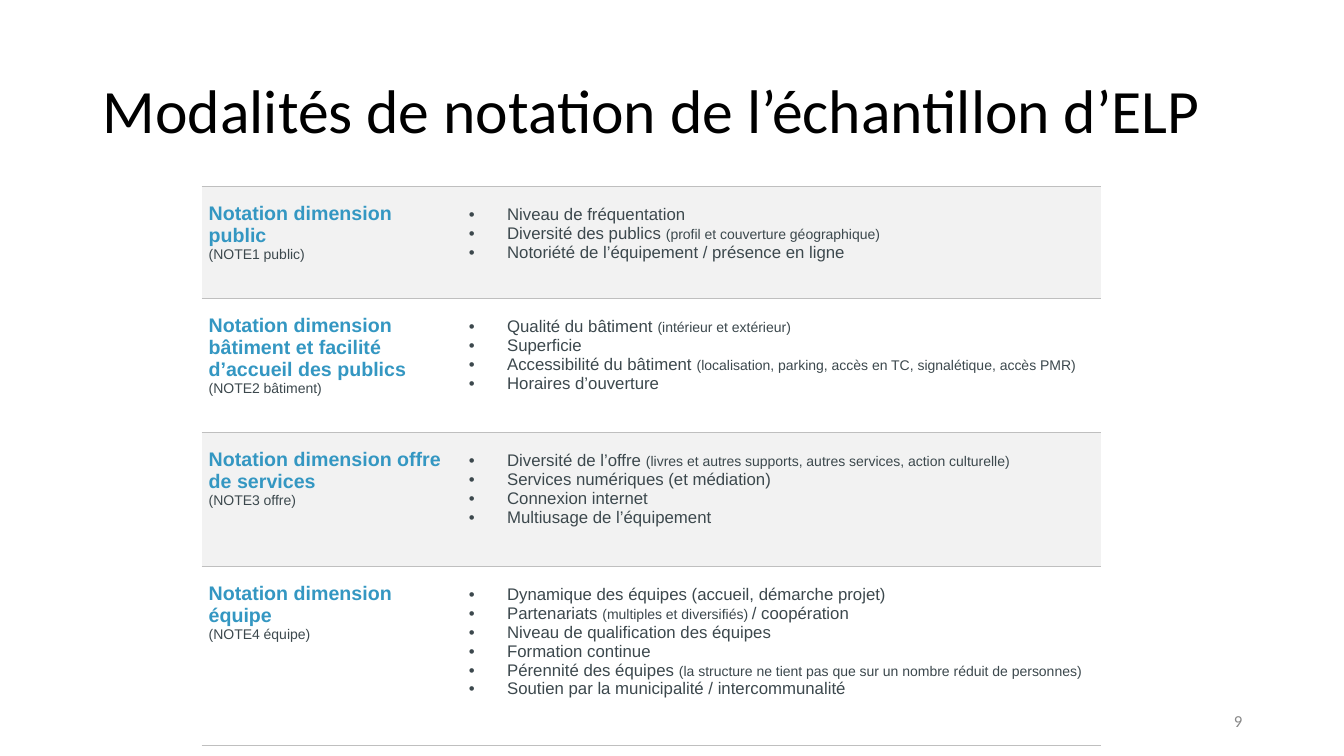
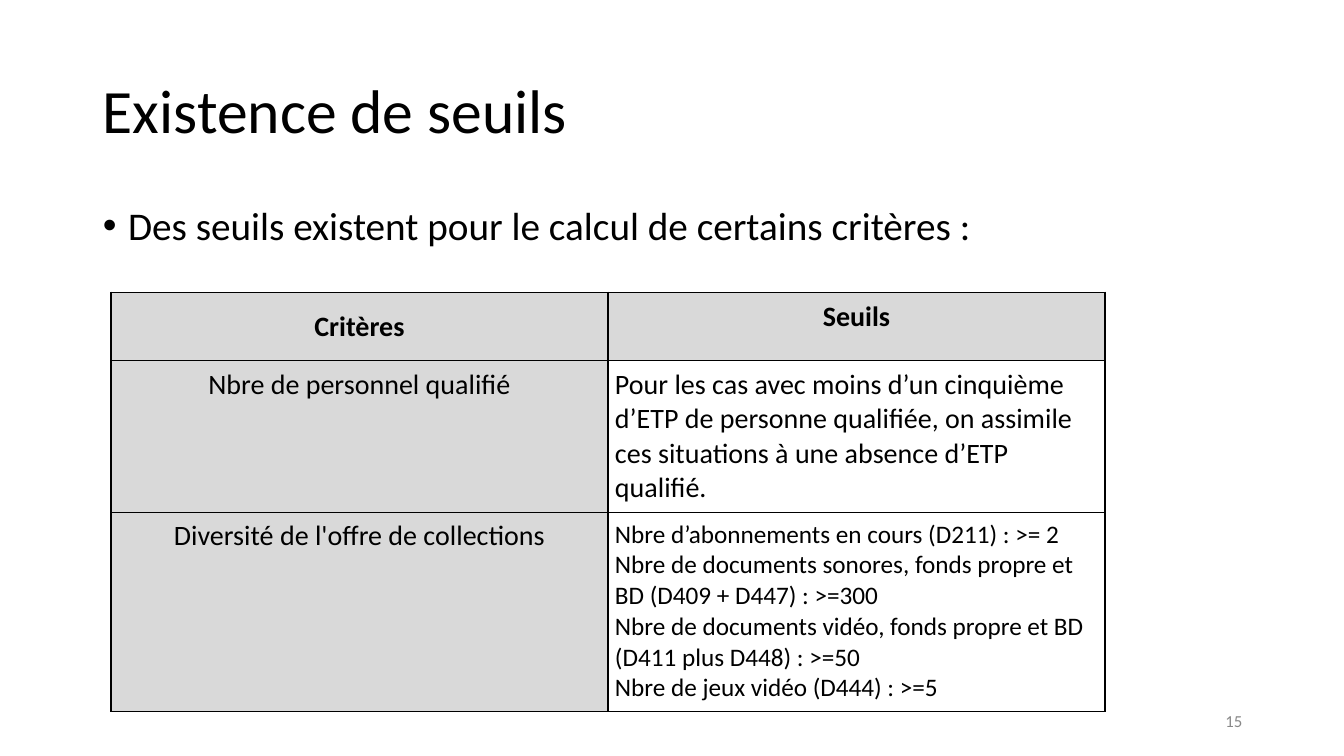
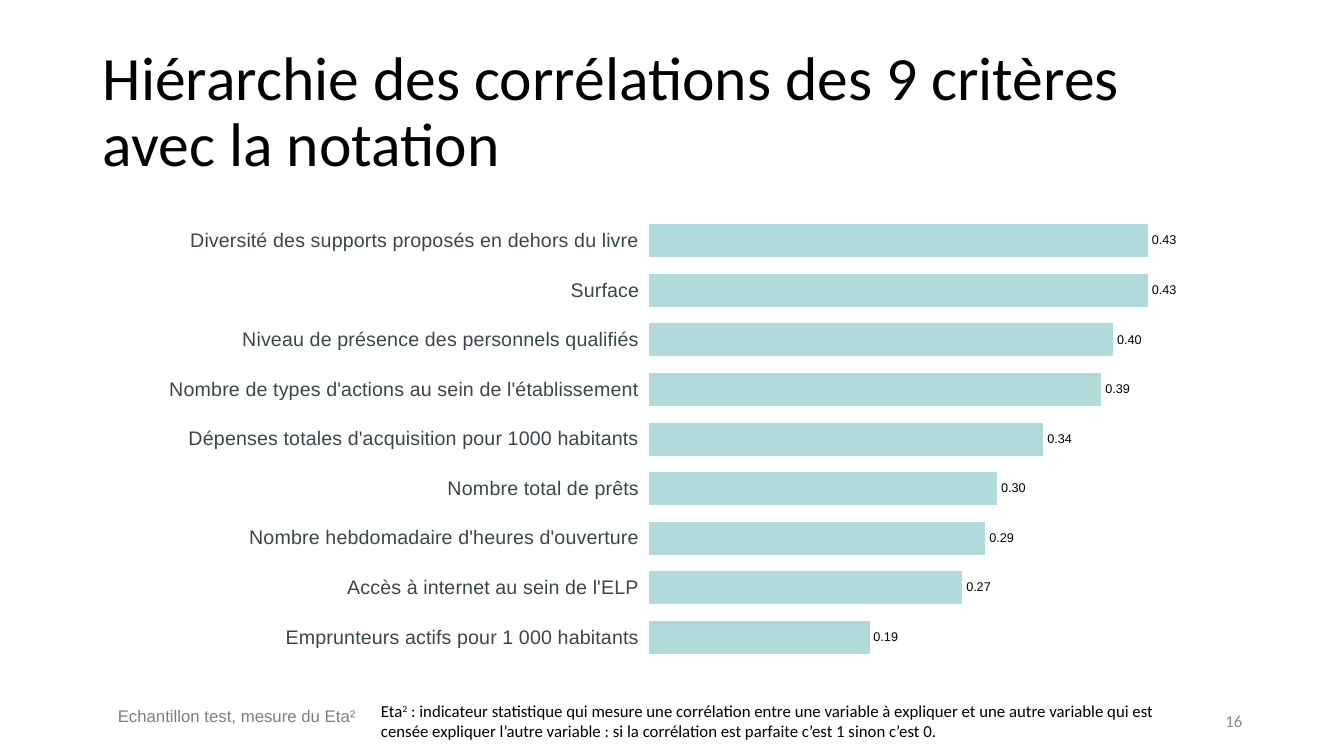
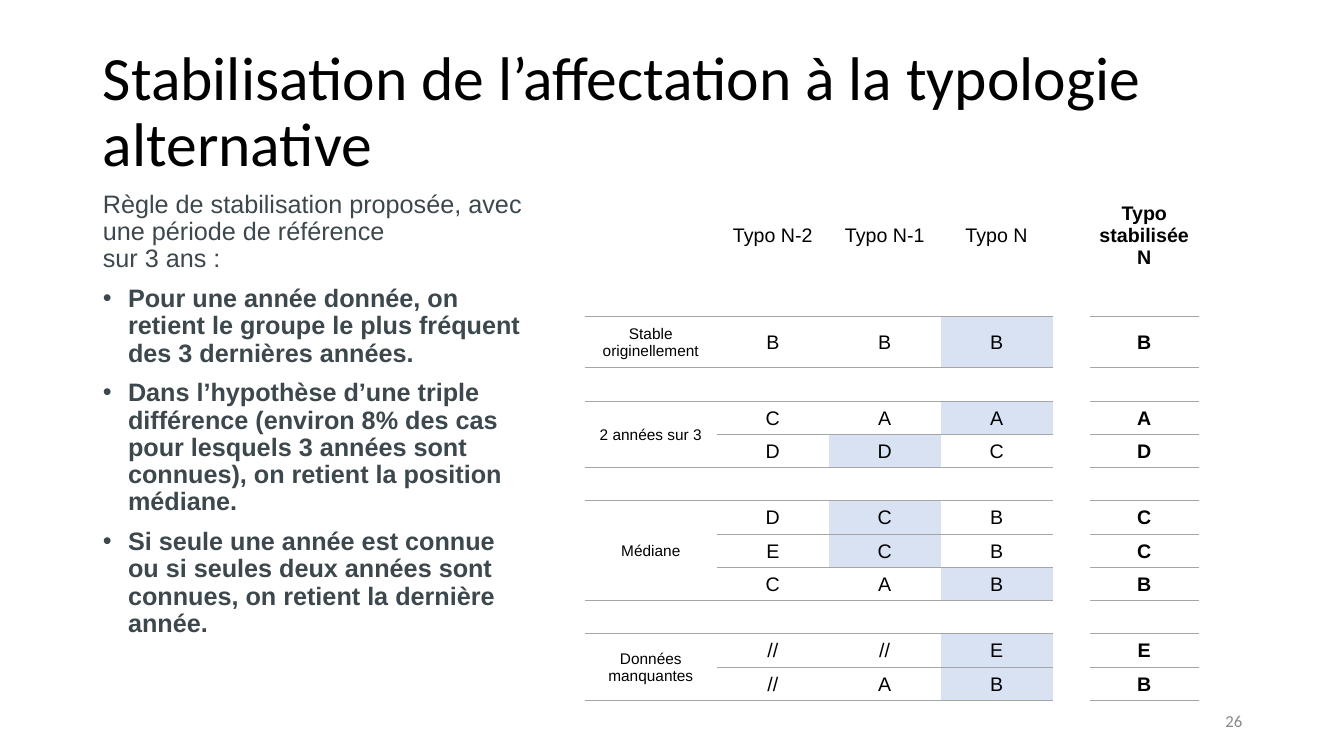
"""Build four slides on the rating and typing of public reading places."""
from dataclasses import dataclass
from typing import Any, Optional, Sequence, Union

import lxml.etree
import pptx
import pptx.chart.data
import pptx.dml.color
import pptx.enum.chart
import pptx.enum.text
import pptx.oxml.ns
import pptx.util

RGBColor = pptx.dml.color.RGBColor
BLACK = RGBColor(0x00, 0x00, 0x00)
SLATE = RGBColor(0x3C, 0x48, 0x4D)
LABEL = RGBColor(0x3A, 0x47, 0x4B)
BLUE = RGBColor(0x34, 0x97, 0xC2)
TEAL = RGBColor(0xB0, 0xDB, 0xDA)
PALE = RGBColor(0xD8, 0xE2, 0xF3)
MIST = RGBColor(0xF2, 0xF2, 0xF2)
HEAD = RGBColor(0xD9, 0xD9, 0xD9)
RULE = RGBColor(0xBF, 0xBF, 0xBF)
GRID = RGBColor(0xA6, 0xA6, 0xA6)
NOTE = RGBColor(0x7F, 0x7F, 0x7F)
PAGE = RGBColor(0x88, 0x88, 0x88)
SANS = "Arial"
MAIN = "Calibri"
PLAIN = "{2D5ABB26-0587-4C30-8999-92F81FD0307C}"
ALIGN = pptx.enum.text.PP_ALIGN
ANCHOR = pptx.enum.text.MSO_ANCHOR
qn = pptx.oxml.ns.qn


@dataclass(frozen=True)
class Span:
    text: str
    size: Optional[int] = None
    bold: Optional[bool] = None
    color: Optional[RGBColor] = None
    sup: bool = False


Line = Union[str, Sequence[Span]]


@dataclass(frozen=True)
class Box:
    left: int
    top: int
    width: int
    height: int

    def emu(self) -> tuple[int, ...]:
        return px(self.left), px(self.top), px(self.width), px(self.height)


@dataclass(frozen=True)
class Theme:
    name: str
    note: str
    items: Sequence[Line]
    height: int


@dataclass(frozen=True)
class Case:
    years: Sequence[str]
    pick: int
    final: str


@dataclass(frozen=True)
class Group:
    name: str
    cases: Sequence[Case]


def px(count: int) -> int:
    return pptx.util.Emu(count * 9144)


def small(lead: str, aside: str, tail: str = "") -> list[Span]:
    parts = [Span(lead), Span(aside, size=10)]
    return parts + [Span(tail)] if tail else parts


def text(frame: Any, lines: Sequence[Line], *, size: int, face: str = MAIN, color: RGBColor = BLACK,
         bold: bool = False, align: Any = ALIGN.LEFT, mark: int = 0, plain: int = 0,
         gap: int = 0, lead: float = 1.0) -> None:
    for row, line in enumerate(lines):
        para = frame.paragraphs[0] if row == 0 else frame.add_paragraph()
        props = para._p.get_or_add_pPr()
        dent = mark if row >= plain else 0
        props.set("marL", str(px(dent)))
        props.set("indent", str(px(-dent)))
        if dent:
            lxml.etree.SubElement(props, qn("a:buFont"), typeface=SANS)
            lxml.etree.SubElement(props, qn("a:buChar"), char="•")
        else:
            lxml.etree.SubElement(props, qn("a:buNone"))
        para.alignment = align
        para.line_spacing = lead
        para.space_before = pptx.util.Pt(gap if row else 0)
        for span in [Span(line)] if isinstance(line, str) else line:
            for part, piece in enumerate(span.text.split("\n")):
                if part:
                    para.add_line_break()
                run = para.add_run()
                run.text = piece
                run.font.name = face
                run.font.size = pptx.util.Pt(span.size or size)
                run.font.bold = bold if span.bold is None else span.bold
                run.font.color.rgb = span.color or color
                if span.sup:
                    run._r.get_or_add_rPr().set("baseline", "30000")


def place(shape: Any, box: Box) -> None:
    shape.left, shape.top, shape.width, shape.height = box.emu()


def setup(frame: Any, anchor: Any = ANCHOR.TOP) -> Any:
    frame.word_wrap = True
    frame.auto_size = pptx.enum.text.MSO_AUTO_SIZE.NONE
    frame.vertical_anchor = anchor
    frame.margin_left = frame.margin_right = px(10)
    frame.margin_top = frame.margin_bottom = px(5)
    return frame


def label(slide: Any, box: Box, lines: Sequence[Line], anchor: Any = ANCHOR.TOP, **form: Any) -> None:
    shape = slide.shapes.add_textbox(*box.emu())
    text(setup(shape.text_frame, anchor), lines, **form)


def start(deck: Any, title: str, page: int, body: Optional[Box] = None) -> Any:
    slide = deck.slides.add_slide(deck.slide_layouts[1 if body else 5])
    place(slide.shapes.title, Box(92, 40, 1150, 145))
    text(setup(slide.shapes.title.text_frame, ANCHOR.MIDDLE), [title], size=44, lead=0.9)
    if body:
        place(slide.placeholders[1], body)
        setup(slide.placeholders[1].text_frame)
    label(slide, Box(942, 695, 300, 40), [str(page)], ANCHOR.MIDDLE, size=12, color=PAGE, align=ALIGN.RIGHT)
    return slide


def table(slide: Any, left: int, top: int, cols: Sequence[int], rows: Sequence[int]) -> Any:
    box = Box(left, top, sum(cols), sum(rows))
    grid = slide.shapes.add_table(len(rows), len(cols), *box.emu()).table
    grid.first_row = grid.horz_banding = False
    grid._tbl.tblPr.find(qn("a:tableStyleId")).text = PLAIN
    for col, width in zip(grid.columns, cols):
        col.width = px(width)
    for row, height in zip(grid.rows, rows):
        row.height = px(height)
    return grid


def cell(item: Any, lines: Sequence[Line] = (), *, pad: Sequence[int], edges: str = "", ink: RGBColor = BLACK,
         weight: float = 1, fill: Optional[RGBColor] = None, anchor: Any = ANCHOR.TOP, **form: Any) -> None:
    item.margin_left, item.margin_top, item.margin_right, item.margin_bottom = map(px, pad)
    item.vertical_anchor = anchor
    props = item._tc.get_or_add_tcPr()
    for edge in edges:
        line = lxml.etree.SubElement(props, qn(f"a:ln{edge}"), w=str(pptx.util.Pt(weight)))
        solid = lxml.etree.SubElement(line, qn("a:solidFill"))
        lxml.etree.SubElement(solid, qn("a:srgbClr"), val=str(ink))
    if fill is None:
        item.fill.background()
    else:
        item.fill.solid()
        item.fill.fore_color.rgb = fill
    if lines:
        text(item.text_frame, lines, **form)


THEMES = [
    Theme("public", "(NOTE1 public)", [
        "Niveau de fréquentation",
        small("Diversité des publics ", "(profil et couverture géographique)"),
        "Notoriété de l’équipement / présence en ligne"], 111),
    Theme("bâtiment et facilité d’accueil des publics", "(NOTE2 bâtiment)", [
        small("Qualité du bâtiment ", "(intérieur et extérieur)"),
        "Superficie",
        small("Accessibilité du bâtiment ", "(localisation, parking, accès en TC, signalétique, accès PMR)"),
        "Horaires d’ouverture"], 133),
    Theme("offre de services", "(NOTE3 offre)", [
        small("Diversité de l’offre ", "(livres et autres supports, autres services, action culturelle)"),
        "Services numériques (et médiation)",
        "Connexion internet",
        "Multiusage de l’équipement"], 133),
    Theme("équipe", "(NOTE4 équipe)", [
        "Dynamique des équipes (accueil, démarche projet)",
        small("Partenariats ", "(multiples et diversifiés) ", "/ coopération"),
        "Niveau de qualification des équipes",
        "Formation continue",
        small("Pérennité des équipes ", "(la structure ne tient pas que sur un nombre réduit de personnes)"),
        "Soutien par la municipalité / intercommunalité"], 178),
]

LIMITS = [
    ("Nbre de personnel qualifié", 20, [
        "Pour les cas avec moins d’un cinquième d’ETP de personne qualifiée, on assimile ces situations "
        "à une absence d’ETP qualifié."]),
    ("Diversité de l'offre de collections", 18, [
        "Nbre d’abonnements en cours (D211) : >= 2",
        "Nbre de documents sonores, fonds propre et BD (D409 + D447) : >=300",
        "Nbre de documents vidéo, fonds propre et BD (D411 plus D448) : >=50",
        "Nbre de jeux vidéo (D444) : >=5"]),
]

SCORES = {
    "Diversité des supports proposés en dehors du livre": 0.43,
    "Surface": 0.43,
    "Niveau de présence des personnels qualifiés": 0.40,
    "Nombre de types d'actions au sein de l'établissement": 0.39,
    "Dépenses totales d'acquisition pour 1000 habitants": 0.34,
    "Nombre total de prêts": 0.30,
    "Nombre hebdomadaire d'heures d'ouverture": 0.29,
    "Accès à internet au sein de l'ELP": 0.27,
    "Emprunteurs actifs pour 1 000 habitants": 0.19,
}

GROUPS = [
    Group("Stable originellement", [Case(("B", "B", "B"), 2, "B")]),
    Group("2 années sur 3", [Case(("C", "A", "A"), 2, "A"), Case(("D", "D", "C"), 1, "D")]),
    Group("Médiane", [Case(("D", "C", "B"), 1, "C"), Case(("E", "C", "B"), 1, "C"),
                      Case(("C", "A", "B"), 2, "B")]),
    Group("Données manquantes", [Case(("//", "//", "E"), 2, "E"), Case(("//", "A", "B"), 2, "B")]),
]


def themes(deck: Any) -> None:
    slide = start(deck, "Modalités de notation de l’échantillon d’ELP", 9)
    grid = table(slide, 200, 185, [258, 634], [theme.height for theme in THEMES])
    for row, theme in enumerate(THEMES):
        look = dict(edges="TB", ink=RULE, fill=None if row % 2 else MIST, face=SANS, color=SLATE)
        name = [Span(f"Notation dimension {theme.name}", size=14, bold=True, color=BLUE)]
        cell(grid.cell(row, 0), [name, theme.note], pad=(7, 16, 7, 0), size=10, **look)
        cell(grid.cell(row, 1), theme.items, pad=(7, 19, 7, 0), size=12, mark=38, align=ALIGN.JUSTIFY, **look)


def limits(deck: Any) -> None:
    slide = start(deck, "Existence de seuils", 15, Box(92, 200, 1150, 476))
    text(slide.placeholders[1].text_frame, ["Des seuils existent pour le calcul de certains critères :"],
         size=28, mark=25, lead=0.9)
    grid = table(slide, 110, 290, [493, 493], [68, 150, 198])
    look = dict(pad=(7, 7, 7, 7), edges="LRTB")
    top = dict(look, fill=HEAD, align=ALIGN.CENTER, size=20)
    cell(grid.cell(0, 0), ["Critères"], anchor=ANCHOR.MIDDLE, bold=True, **top)
    cell(grid.cell(0, 1), ["Seuils"], bold=True, **top)
    for row, (name, size, lines) in enumerate(LIMITS, 1):
        cell(grid.cell(row, 0), [name], **top)
        cell(grid.cell(row, 1), lines, size=size, **look)


def scores(deck: Any) -> None:
    slide = start(deck, "Hiérarchie des corrélations des 9 critères avec la notation", 16)
    data = pptx.chart.data.CategoryChartData(number_format="0.00")
    data.categories = list(SCORES)
    data.add_series("Series 1", list(SCORES.values()))
    kind = pptx.enum.chart.XL_CHART_TYPE.BAR_CLUSTERED
    chart = slide.shapes.add_chart(kind, *Box(92, 200, 1150, 476).emu(), data).chart
    chart.has_legend = chart.has_title = False
    chart.font.name = SANS
    chart.font.size = pptx.util.Pt(18)
    chart.font.color.rgb = BLACK
    names = chart.category_axis
    names.reverse_order = True
    names.format.line.fill.background()
    names.tick_labels.font.name = SANS
    names.tick_labels.font.size = pptx.util.Pt(14)
    names.tick_labels.font.color.rgb = LABEL
    scale = chart.value_axis
    scale.visible = scale.has_major_gridlines = False
    scale.minimum_scale, scale.maximum_scale = 0, 0.5
    plot = chart.plots[0]
    plot.gap_width = 50
    plot.vary_by_categories = False
    fill = plot.series[0].format.fill
    fill.solid()
    fill.fore_color.rgb = TEAL
    plot.has_data_labels = True
    tags = plot.data_labels
    tags.show_value = True
    tags.number_format, tags.number_format_is_linked = "0.00", False
    tags.position = pptx.enum.chart.XL_LABEL_POSITION.OUTSIDE_END
    tags.font.name = SANS
    tags.font.size = pptx.util.Pt(9)
    tags.font.color.rgb = BLACK
    area = chart._chartSpace.chart.plotArea
    for old in area.findall(qn("c:layout")):
        area.remove(old)
    frame = lxml.etree.Element(qn("c:layout"))
    area.insert(0, frame)
    manual = lxml.etree.SubElement(frame, qn("c:manualLayout"))
    for tag, val in dict(layoutTarget="inner", xMode="edge", yMode="edge", x=0.48, y=0.03, w=0.5, h=0.93).items():
        lxml.etree.SubElement(manual, qn(f"c:{tag}"), val=str(val))
    label(slide, Box(107, 695, 296, 30), ["Echantillon test, mesure du Eta²"], size=12, face=SANS, color=NOTE)
    label(slide, Box(368, 690, 791, 50), [[Span("Eta"), Span("2", sup=True), Span(
        " : indicateur statistique qui mesure une corrélation entre une variable à expliquer et une autre "
        "variable qui est censée expliquer l’autre variable : si la corrélation est parfaite c’est 1 "
        "sinon c’est 0.")]], size=12)


def groups(deck: Any) -> None:
    slide = start(deck, "Stabilisation de l’affectation à la typologie alternative", 26, Box(92, 185, 438, 491))
    rules = ["Pour une année donnée, on retient le groupe le plus fréquent des 3 dernières années.",
             "Dans l’hypothèse d’une triple différence (environ 8% des cas pour lesquels 3 années sont connues), "
             "on retient la position médiane.",
             "Si seule une année est connue ou si seules deux années sont connues, on retient la dernière année."]
    intro = [Span("Règle de stabilisation proposée, avec une période de référence \nsur 3 ans :", bold=False)]
    text(slide.placeholders[1].text_frame, [intro, *rules], size=18, face=SANS, color=SLATE, bold=True,
         mark=25, plain=1, gap=9, lead=0.9)
    grid = table(slide, 580, 185, [131, 111, 111, 111, 37, 108], [96, 33, 51] + [33] * 10)
    look = dict(pad=(1, 1, 1, 0), anchor=ANCHOR.MIDDLE, face=SANS, align=ALIGN.CENTER, ink=GRID, weight=0.75)
    heads = ["", "Typo N-2", "Typo N-1", "Typo N", "", "Typo stabilisée N"]
    for col, head in enumerate(heads):
        cell(grid.cell(0, col), [head] if head else [], size=14, bold=col == 5, **look)
    row = 1
    for group in GROUPS:
        for col in range(6):
            cell(grid.cell(row, col), edges="" if col == 4 else "B" if row == 1 else "TB", **look)
        row += 1
        first = row
        for case in group.cases:
            if row == first:
                cell(grid.cell(row, 0), [group.name], edges="TB", size=11, **look)
            else:
                cell(grid.cell(row, 0), **look)
            for year, letter in enumerate(case.years):
                cell(grid.cell(row, year + 1), [letter], edges="TB", size=14,
                     fill=PALE if year == case.pick else None, **look)
            cell(grid.cell(row, 4), **look)
            cell(grid.cell(row, 5), [case.final], edges="TB", size=14, bold=True, **look)
            row += 1
        if row - first > 1:
            grid.cell(first, 0).merge(grid.cell(row - 1, 0))


def main() -> None:
    deck = pptx.Presentation()
    deck.slide_width, deck.slide_height = px(1333), px(750)
    for build in (themes, limits, scores, groups):
        build(deck)
    deck.save("out.pptx")


if __name__ == "__main__":
    main()
